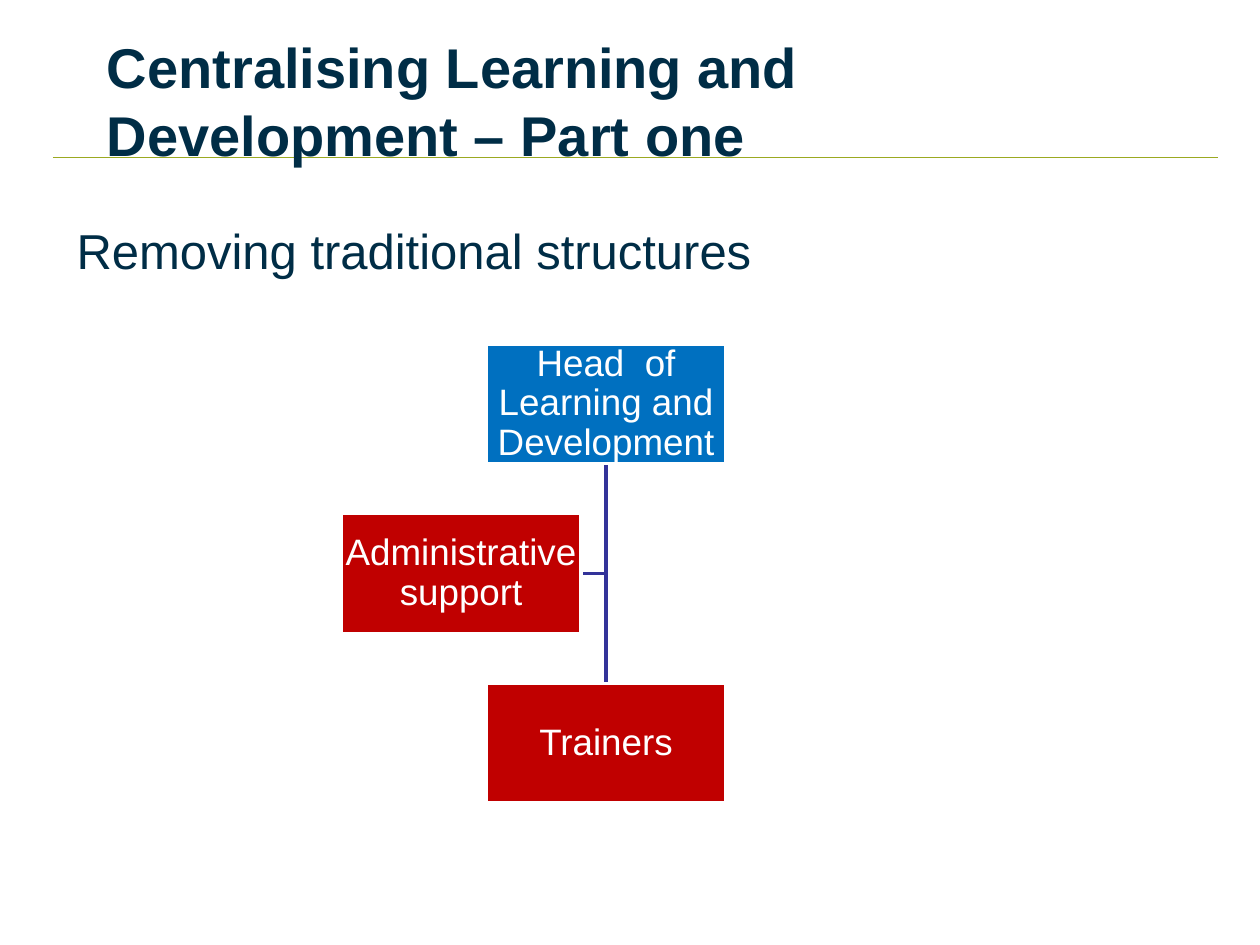
from dataclasses import dataclass

from pptx import Presentation
from pptx.dml.color import RGBColor
from pptx.enum import shapes, text
from pptx.oxml import xmlchemy
from pptx.util import Pt


@dataclass(frozen=True)
class Theme:
    """Hold the colours, font and type sizes of the slide."""
    ink: str = "002D46"
    rule: str = "9BA921"
    stem: str = "333399"
    lead: str = "0070C0"
    team: str = "C00000"
    white: str = "FFFFFF"
    font: str = "Arial"
    title_size: int = 32
    body_size: int = 28
    node_size: int = 21


THEME = Theme()
NODE_WIDTH, NODE_HEIGHT = 136.8, 68.4
CHART_CENTRE, CHART_TOP, LEVEL_STEP = 346.3, 196.6, 96.95
BRANCH_GAP = 14.4


def apply(target, formats):
    """Set each attribute named in formats on target."""
    for name, value in formats.items():
        setattr(target, name, value)


def write(frame, wording, size, colour, frame_formats, paragraph_formats, bold=False):
    """Fill a text frame with one formatted paragraph."""
    apply(frame, {"word_wrap": True, **frame_formats})
    paragraph = frame.paragraphs[0]
    paragraph.text = wording
    apply(paragraph, paragraph_formats)
    apply(paragraph.font, {"name": THEME.font, "size": Pt(size), "bold": bold})
    paragraph.font.color.rgb = RGBColor.from_string(colour)


def add_heading(slide, bounds, wording, size, frame_formats, bold=False):
    """Add a left-aligned text box."""
    heading = slide.shapes.add_textbox(*map(Pt, bounds))
    write(heading.text_frame, wording, size, THEME.ink, frame_formats,
          {"alignment": text.PP_ALIGN.LEFT}, bold)


def add_node(slide, centre, level, wording, fill):
    """Add one box of the organisation chart."""
    node = slide.shapes.add_shape(
        shapes.MSO_SHAPE.RECTANGLE, Pt(centre - NODE_WIDTH / 2),
        Pt(CHART_TOP + level * LEVEL_STEP), Pt(NODE_WIDTH), Pt(NODE_HEIGHT))
    node.shadow.inherit = False
    node.fill.solid()
    node.fill.fore_color.rgb = RGBColor.from_string(fill)
    node.line.color.rgb = RGBColor.from_string(THEME.white)
    node.line.width = Pt(2)
    insets = {f"margin_{side}": Pt(0.72) for side in ("left", "top", "right", "bottom")}
    write(node.text_frame, wording, THEME.node_size, THEME.white,
          {"vertical_anchor": text.MSO_ANCHOR.MIDDLE, **insets},
          {"alignment": text.PP_ALIGN.CENTER, "line_spacing": 0.9})
    return node


def add_line(slide, ends, colour, width):
    """Add a straight line behind everything else on the slide."""
    line = slide.shapes.add_connector(shapes.MSO_CONNECTOR.STRAIGHT, *map(Pt, ends))
    line.line.color.rgb = RGBColor.from_string(colour)
    line.line.width = Pt(width)
    properties = line._element.spPr
    properties.append(xmlchemy.OxmlElement("a:effectLst"))
    slide.shapes._spTree.insert(2, line._element)
    return line


def add_structure(slide):
    """Build the organisation chart with its stem and side branch."""
    support_centre = CHART_CENTRE - BRANCH_GAP - NODE_WIDTH / 2
    head = add_node(slide, CHART_CENTRE, 0, "Head  of Learning and Development", THEME.lead)
    trainers = add_node(slide, CHART_CENTRE, 2, "Trainers", THEME.team)
    support = add_node(slide, support_centre, 1, "Administrative support", THEME.team)

    stem_top = CHART_TOP + NODE_HEIGHT
    stem = add_line(slide, (CHART_CENTRE, stem_top, CHART_CENTRE, CHART_TOP + 2 * LEVEL_STEP),
                    THEME.stem, 2)
    stem.begin_connect(head, 2)
    stem.end_connect(trainers, 0)

    branch_y = CHART_TOP + LEVEL_STEP + NODE_HEIGHT / 2
    branch = add_line(slide, (CHART_CENTRE - BRANCH_GAP, branch_y, CHART_CENTRE, branch_y),
                      THEME.stem, 2)
    branch.begin_connect(support, 3)


def main():
    """Create and save the slide."""
    deck = Presentation()
    apply(deck, {"slide_width": Pt(720), "slide_height": Pt(540)})
    slide = deck.slides.add_slide(deck.slide_layouts[6])
    add_heading(slide, (54, 12.24, 612, 90), "Centralising Learning and Development – Part one",
                THEME.title_size, {"vertical_anchor": text.MSO_ANCHOR.MIDDLE}, bold=True)
    add_heading(slide, (36.72, 120.24, 629.28, 360), "Removing traditional structures",
                THEME.body_size, {"margin_top": Pt(6)})
    add_structure(slide)
    add_line(slide, (30.24, 90, 696.24, 90), THEME.rule, 0.75)
    deck.save("out.pptx")


if __name__ == "__main__":
    main()
